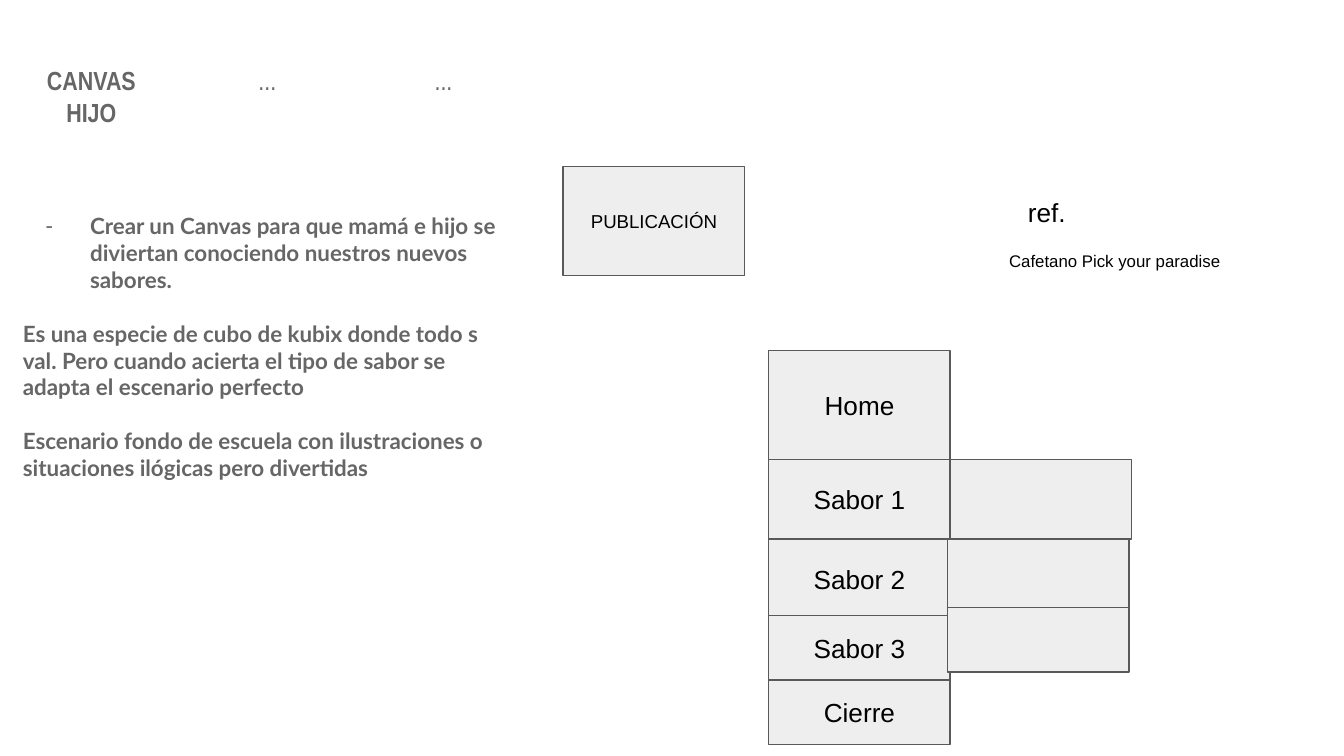
import lxml.etree
import pptx
import pptx.dml.color
import pptx.enum.shapes
import pptx.enum.text
import pptx.oxml.ns
import pptx.util

COLUMNS, ROWS = 100, 56.25
SLIDE_WIDTH = pptx.util.Inches(10)
SLIDE_HEIGHT = SLIDE_WIDTH * 9 // 16
COLORS = {"heading": "666666", "label": "000000", "panel": "EEEEEE", "border": "595959"}
ALIGN = pptx.enum.text.PP_ALIGN
ANCHOR = pptx.enum.text.MSO_ANCHOR

PANEL_WIDTH, FLOW_LEFT = 13.5, 57.2
HEADING = {"font": "Arial Narrow", "size": 14, "color": "heading", "align": ALIGN.CENTER}
SCREENS = [
    ("Home", 26.1, 8.1, None),
    ("Sabor 1", 34.2, 5.9, (70.7, 34.2)),
    ("Sabor 2", 40.1, 5.9, (70.5, 40.1)),
    ("Sabor 3", 45.8, 4.8, (70.5, 45.2)),
    ("Cierre", 50.6, 4.8, None),
]
IDEAS = [
    "Crear un Canvas para que mamá e hijo se diviertan conociendo nuestros nuevos sabores.",
    "Es una especie de cubo de kubix donde todo s val. "
    "Pero cuando acierta el tipo de sabor se adapta el escenario perfecto",
    "Escenario fondo de escuela con ilustraciones o situaciones ilógicas pero divertidas",
]


def rgb(name):
    """Return a palette colour."""
    return pptx.dml.color.RGBColor.from_string(COLORS[name])


def area(left, top, width, height):
    """Turn grid columns and rows into slide lengths."""
    across, down = SLIDE_WIDTH / COLUMNS, SLIDE_HEIGHT / ROWS
    return [round(n) for n in (left * across, top * down, width * across, height * down)]


def write(holder, lines, font="Arial", size=14, color="label", bold=False,
          align=ALIGN.LEFT, anchor=ANCHOR.TOP, gap=0):
    """Fill a shape with formatted paragraphs and return its text frame."""
    frame = holder.text_frame
    frame.word_wrap = True
    frame.auto_size = pptx.enum.text.MSO_AUTO_SIZE.NONE
    frame.vertical_anchor = anchor
    for side in ("left", "top", "right", "bottom"):
        setattr(frame, f"margin_{side}", pptx.util.Inches(0.1))
    for index, line in enumerate(lines):
        paragraph = frame.paragraphs[0] if index == 0 else frame.add_paragraph()
        paragraph.alignment = align
        paragraph.space_before = pptx.util.Pt(gap if index else 0)
        run = paragraph.add_run()
        run.text = line
        run.font.name, run.font.size, run.font.bold = font, pptx.util.Pt(size), bold
        run.font.color.rgb = rgb(color)
    return frame


def add_note(slide, place, line, **style):
    """Add a one-line text box."""
    return write(slide.shapes.add_textbox(*area(*place)), [line], **style)


def add_panel(slide, left, top, height, label=None, size=14):
    """Add a grey screen panel with an optional centred label."""
    panel = slide.shapes.add_shape(pptx.enum.shapes.MSO_SHAPE.RECTANGLE,
                                   *area(left, top, PANEL_WIDTH, height))
    panel.shadow.inherit = False
    panel.fill.solid()
    panel.fill.fore_color.rgb = rgb("panel")
    panel.line.color.rgb = rgb("border")
    panel.line.width = pptx.util.Pt(0.75)
    if label:
        write(panel, [label], size=size, align=ALIGN.CENTER, anchor=ANCHOR.MIDDLE)


def fill_placeholder(holder, place, lines, **style):
    """Move a template placeholder and write its text."""
    holder.left, holder.top, holder.width, holder.height = area(*place)
    return write(holder, lines, **style)


def set_bullet(paragraph, mark=None):
    """Give a paragraph a hanging bullet, or remove its bullet and indent."""
    properties = paragraph._p.get_or_add_pPr()
    margin, indent = (0.5, -0.33) if mark else (0, 0)
    properties.set("marL", str(pptx.util.Inches(margin)))
    properties.set("indent", str(pptx.util.Inches(indent)))
    qn = pptx.oxml.ns.qn
    if mark:
        tint = lxml.etree.SubElement(properties, qn("a:buClr"))
        lxml.etree.SubElement(tint, qn("a:srgbClr"), val=COLORS["heading"])
        lxml.etree.SubElement(properties, qn("a:buChar"), char=mark)
    else:
        lxml.etree.SubElement(properties, qn("a:buNone"))


def add_brief(slide):
    """Write the heading row and the list of ideas."""
    title, body = slide.placeholders
    fill_placeholder(title, (0.7, 3.8, 12.2, 7.1), ["CANVAS", "HIJO"], bold=True, **HEADING)
    for column in (1, 2):
        add_note(slide, (0.7 + 13.1 * column, 3.8, 12.2, 7.1), "...", **HEADING)
    ideas = fill_placeholder(body, (0.7, 14.8, 38.4, 40.5), IDEAS, font="Lato", size=12,
                             color="heading", bold=True, gap=14.4)
    for index, idea in enumerate(ideas.paragraphs):
        set_bullet(idea, None if index else "-")


def add_flow(slide):
    """Draw the publication panel and the stack of screens."""
    add_panel(slide, 41.9, 12.4, 8.1, "PUBLICACIÓN", size=10)
    for label, top, height, side in SCREENS:
        add_panel(slide, FLOW_LEFT, top, height, label)
        if side:
            add_panel(slide, *side, height)


def main():
    """Build and save the slide."""
    deck = pptx.Presentation()
    deck.slide_width, deck.slide_height = SLIDE_WIDTH, SLIDE_HEIGHT
    slide = deck.slides.add_slide(deck.slide_layouts[1])
    add_brief(slide)
    add_flow(slide)
    add_note(slide, (75.5, 13.6, 15.7, 3), "ref.")
    add_note(slide, (74.1, 17, 20.6, 4.8), "Cafetano Pick your paradise",
             size=9, anchor=ANCHOR.MIDDLE)
    deck.save("out.pptx")


if __name__ == "__main__":
    main()
